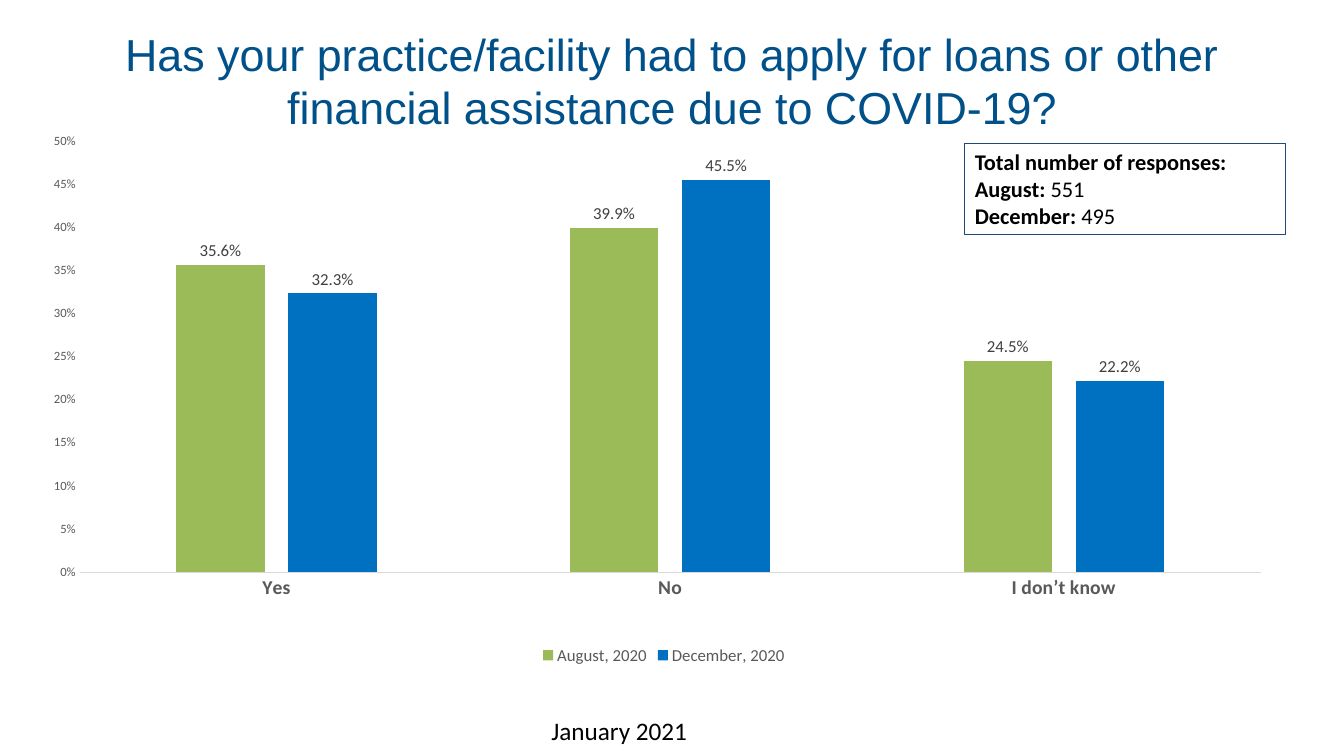
"""Build the slide comparing August and December answers on financial assistance."""
from lxml.etree import SubElement
from pptx import Presentation
from pptx.chart.data import CategoryChartData
from pptx.dml.color import RGBColor
from pptx.enum.chart import XL_CHART_TYPE, XL_LABEL_POSITION, XL_LEGEND_POSITION, XL_TICK_MARK
from pptx.enum.shapes import MSO_SHAPE
from pptx.enum.text import MSO_ANCHOR, PP_ALIGN
from pptx.oxml.ns import qn
from pptx.util import Inches, Pt


def paint(target, color):
    if hasattr(target, "solid"):
        target.solid()
        target.fore_color.rgb = RGBColor.from_string(color)
    else:
        target.color.rgb = RGBColor.from_string(color)


def write(paragraph, text, size=16, color="000000", font="Calibri", bold=False, align=PP_ALIGN.LEFT):
    paragraph.alignment = align
    run = paragraph.add_run()
    run.text = text
    run.font.size = Pt(size)
    run.font.name = font
    run.font.bold = bold
    paint(run.font, color)


deck = Presentation()
deck.slide_width, deck.slide_height = Inches(13.33), Inches(7.5)
slide = deck.slides.add_slide(deck.slide_layouts[5])

question = slide.shapes.title
question.left, question.top = Inches(0.92), Inches(0.07)
question.width, question.height = Inches(11.5), Inches(1.45)
question.text_frame.vertical_anchor = MSO_ANCHOR.MIDDLE
write(question.text_frame.paragraphs[0],
      "Has your practice/facility had to apply for loans or other financial assistance due to COVID-19?",
      size=32, color="005089", font="Arial", align=PP_ALIGN.CENTER)

responses = slide.shapes.add_shape(MSO_SHAPE.RECTANGLE, Inches(9.57), Inches(1.42), Inches(3.18), Inches(0.91))
responses.shadow.inherit = False
responses.fill.background()
paint(responses.line, "1F497D")
responses.line.width = Pt(0.75)
responses.text_frame.word_wrap = True
responses.text_frame.vertical_anchor = MSO_ANCHOR.TOP
counts = [("Total number of responses:", ""), ("August: ", "551"), ("December: ", "495")]
for index, (label, count) in enumerate(counts):
    line = responses.text_frame.add_paragraph() if index else responses.text_frame.paragraphs[0]
    write(line, label, bold=True)
    if count:
        write(line, count)

answers = CategoryChartData(number_format="0.0%")
answers.categories = ["Yes", "No", "I don’t know"]
answers.add_series("August, 2020", [0.356, 0.399, 0.245])
answers.add_series("December, 2020", [0.323, 0.455, 0.222])
chart = slide.shapes.add_chart(XL_CHART_TYPE.COLUMN_CLUSTERED, Inches(0.42), Inches(1.29),
                               Inches(12.33), Inches(5.35), answers).chart
chart.has_title = False
chart.has_legend = True
chart.legend.position = XL_LEGEND_POSITION.BOTTOM
chart.legend.include_in_layout = False
chart.font.size = Pt(10)
chart.font.name = "Calibri"

columns = chart.plots[0]
columns.gap_width, columns.overlap = 219, -27
columns.vary_by_categories = False
fonts = [(chart.legend.font, 12, "595959"), (chart.category_axis.tick_labels.font, 14, "595959"),
         (chart.value_axis.tick_labels.font, 9, "595959")]
for month, color in zip(columns.series, ["9BBB59", "0070C0"]):
    paint(month.format.fill, color)
    month.invert_if_negative = False
    labels = month.data_labels
    labels.show_value = True
    labels.number_format, labels.number_format_is_linked = "0.0%", False
    labels.position = XL_LABEL_POSITION.OUTSIDE_END
    fonts.append((labels.font, 12, "404040"))
for font, size, color in fonts:
    font.size = Pt(size)
    font.name = "Calibri"
    paint(font, color)

chart.category_axis.tick_labels.font.bold = True
paint(chart.category_axis.format.line, "D9D9D9")
chart.category_axis.format.line.width = Pt(0.75)
percent = chart.value_axis
percent.minimum_scale, percent.maximum_scale, percent.major_unit = 0, 0.5, 0.05
percent.has_major_gridlines = False
percent.tick_labels.number_format, percent.tick_labels.number_format_is_linked = "0%", False
percent.format.line.fill.background()
for axis in (chart.category_axis, percent):
    axis.major_tick_mark = axis.minor_tick_mark = XL_TICK_MARK.NONE

plot_area = columns.series[0]._element.getparent().getparent()
for old_layout in plot_area.findall(qn("c:layout")):
    plot_area.remove(old_layout)
layout = SubElement(plot_area, qn("c:layout"))
plot_area.insert(0, layout)
manual = SubElement(layout, qn("c:manualLayout"))
for tag, value in [("layoutTarget", "inner"), ("xMode", "edge"), ("yMode", "edge"),
                   ("x", "0.03"), ("y", "0.02"), ("w", "0.95"), ("h", "0.8")]:
    SubElement(manual, qn(f"c:{tag}"), val=value)

date = slide.shapes.add_textbox(Inches(5.37), Inches(7.05), Inches(4.22), Inches(0.4))
date.text_frame.word_wrap = True
write(date.text_frame.paragraphs[0], "January 2021", size=18)

deck.save("out.pptx")
